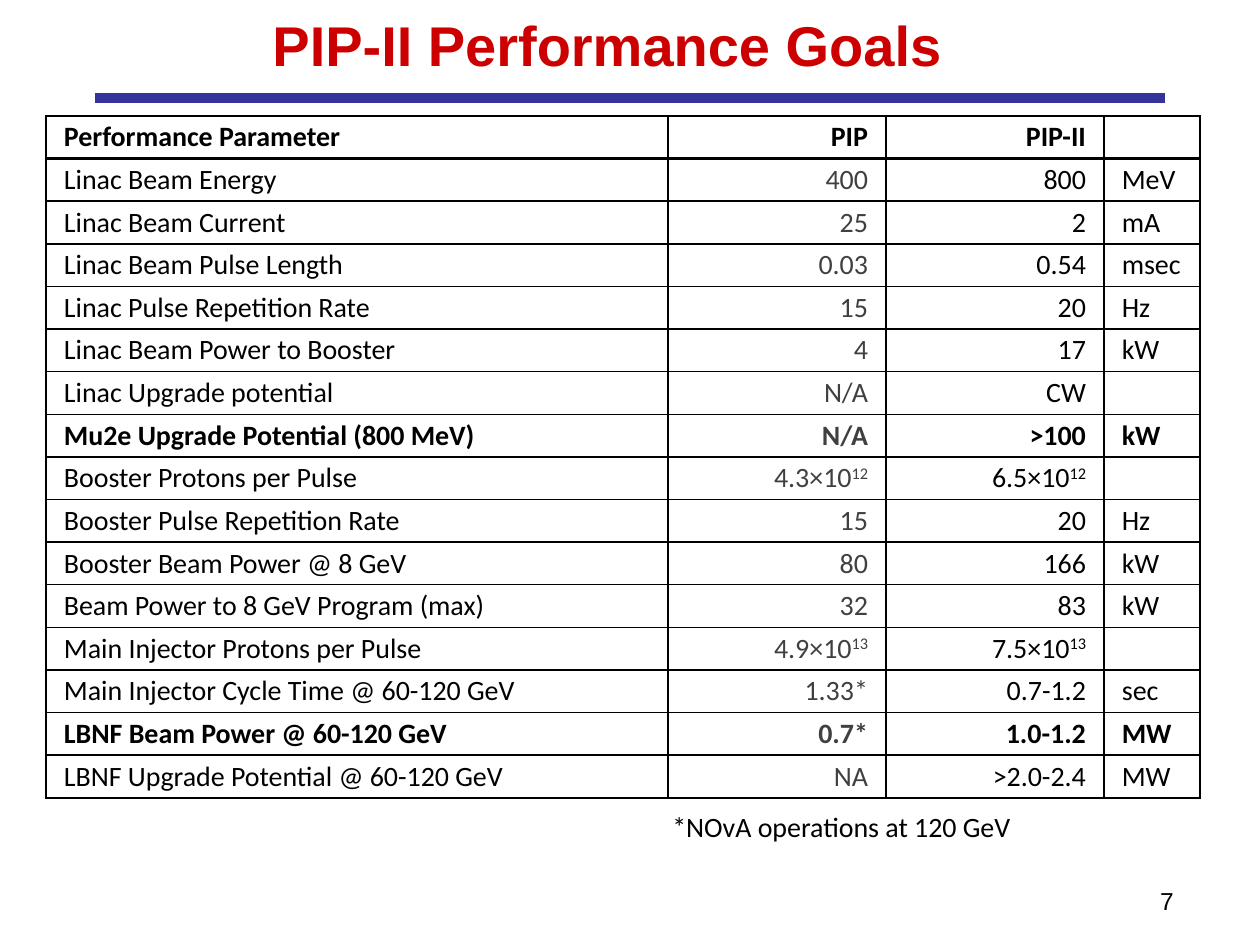
import pptx
import pptx.dml.color
import pptx.enum.shapes
import pptx.enum.text
import pptx.oxml
import pptx.oxml.ns
import pptx.util

PX = 914400 / 126  # EMU in one px
ALIGN = pptx.enum.text.PP_ALIGN
ANCHOR = pptx.enum.text.MSO_ANCHOR
BLACK, GRAY, RED, BLUE = "000000", "404040", "CC0000", "333399"

COLUMN_WIDTHS = [622, 218, 218, 96]
COLUMN_ALIGNS = [ALIGN.LEFT, ALIGN.RIGHT, ALIGN.RIGHT, ALIGN.LEFT]
BOLD_ROWS = {0, 7, 14}
# "^" starts a superscript
GOALS = [
    ("Performance Parameter", "PIP", "PIP-II", ""),
    ("Linac Beam Energy", "400", "800", "MeV"),
    ("Linac Beam Current", "25", "2", "mA"),
    ("Linac Beam Pulse Length", "0.03", "0.54", "msec"),
    ("Linac Pulse Repetition Rate", "15", "20", "Hz"),
    ("Linac Beam Power to Booster", "4", "17", "kW"),
    ("Linac Upgrade potential", "N/A", "CW", ""),
    ("Mu2e Upgrade Potential (800 MeV)", "N/A", ">100", "kW"),
    ("Booster Protons per Pulse", "4.3×10^12", "6.5×10^12", ""),
    ("Booster Pulse Repetition Rate", "15", "20", "Hz"),
    ("Booster Beam Power @ 8 GeV", "80", "166", "kW"),
    ("Beam Power to 8 GeV Program (max)", "32", "83", "kW"),
    ("Main Injector Protons per Pulse", "4.9×10^13", "7.5×10^13", ""),
    ("Main Injector Cycle Time @ 60-120 GeV", "1.33*", "0.7-1.2", "sec"),
    ("LBNF Beam Power @ 60-120 GeV", "0.7*", "1.0-1.2", "MW"),
    ("LBNF Upgrade Potential @ 60-120 GeV", "NA", ">2.0-2.4", "MW"),
]


def px(*lengths):
    return [pptx.util.Emu(round(length * PX)) for length in lengths]


def rgb(color):
    return pptx.dml.color.RGBColor.from_string(color)


def write(paragraph, text, align, color=BLACK, **font):
    """Write text in a paragraph, raising what follows a "^"."""
    paragraph.alignment = align
    for raised, part in enumerate(text.split("^")):
        run = paragraph.add_run()
        run.text = part
        for name, value in font.items():
            setattr(run.font, name, value)
        run.font.color.rgb = rgb(color)
        if raised:
            run.font._element.set("baseline", "30000")


def add_heading(slide, box):
    left, top, width, height = box
    title = slide.shapes.title
    title.left, title.top, title.width, title.height = px(*box)
    title.text_frame.vertical_anchor = ANCHOR.MIDDLE
    write(title.text_frame.paragraphs[0], "PIP-II Performance Goals", ALIGN.CENTER,
          RED, name="Arial", size=pptx.util.Pt(32), bold=True)
    # Rule under the title
    rule_y = top + height + 9
    rule = slide.shapes.add_connector(
        pptx.enum.shapes.MSO_CONNECTOR.STRAIGHT,
        *px(left - 5, rule_y, left + width + 50, rule_y))
    rule.line.color.rgb = rgb(BLUE)
    rule.line.width = pptx.util.Pt(6)
    rule._element.spPr.append(pptx.oxml.parse_xml(
        "<a:effectLst %s/>" % pptx.oxml.ns.nsdecls("a")))


def set_borders(cell, widths):
    for side, width in widths.items():
        cell._tc.get_or_add_tcPr().append(pptx.oxml.parse_xml(
            f'<a:ln{side} {pptx.oxml.ns.nsdecls("a")} w="{pptx.util.Pt(width)}">'
            f'<a:solidFill><a:srgbClr val="{BLACK}"/></a:solidFill></a:ln{side}>'))


def add_goals_table(slide, box):
    table = slide.shapes.add_table(len(GOALS), len(COLUMN_WIDTHS), *px(*box)).table
    table.first_row = table.horz_banding = False
    for column, width in zip(table.columns, COLUMN_WIDTHS):
        column.width = px(width)[0]
    for row in table.rows:
        row.height = px(box[3] / len(GOALS))[0]
    side_margin = px(18)[0]
    for r, goal in enumerate(GOALS):
        # The line below the header row is thicker
        borders = {"L": 1, "R": 1, "T": 1.5 if r == 1 else 1, "B": 1.5 if r == 0 else 1}
        for c, text in enumerate(goal):
            cell = table.cell(r, c)
            cell.margin_left = cell.margin_right = side_margin
            cell.margin_top = cell.margin_bottom = 0
            cell.vertical_anchor = ANCHOR.MIDDLE
            set_borders(cell, borders)
            cell.fill.background()
            if text:
                write(cell.text_frame.paragraphs[0], text, COLUMN_ALIGNS[c],
                      GRAY if c == 1 and r > 0 else BLACK,
                      name="Calibri", size=pptx.util.Pt(16), bold=r in BOLD_ROWS)


def add_note(slide, box, text, align, **font):
    frame = slide.shapes.add_textbox(*px(*box)).text_frame
    frame.word_wrap = True
    write(frame.paragraphs[0], text, align, **font)


def main():
    presentation = pptx.Presentation()
    presentation.slide_width, presentation.slide_height = px(1260, 945)
    slide = presentation.slides.add_slide(presentation.slide_layouts[5])

    add_heading(slide, (100, 0, 1015, 89))
    add_goals_table(slide, (46, 116, sum(COLUMN_WIDTHS), 682))
    # Footnote and page number
    add_note(slide, (423, 803, 837, 47), "*NOvA operations at 120 GeV", ALIGN.CENTER,
             name="Calibri", size=pptx.util.Pt(16))
    add_note(slide, (892, 880, 294, 65), "7", ALIGN.RIGHT,
             name="Arial", size=pptx.util.Pt(14))

    presentation.save("out.pptx")


if __name__ == "__main__":
    main()
